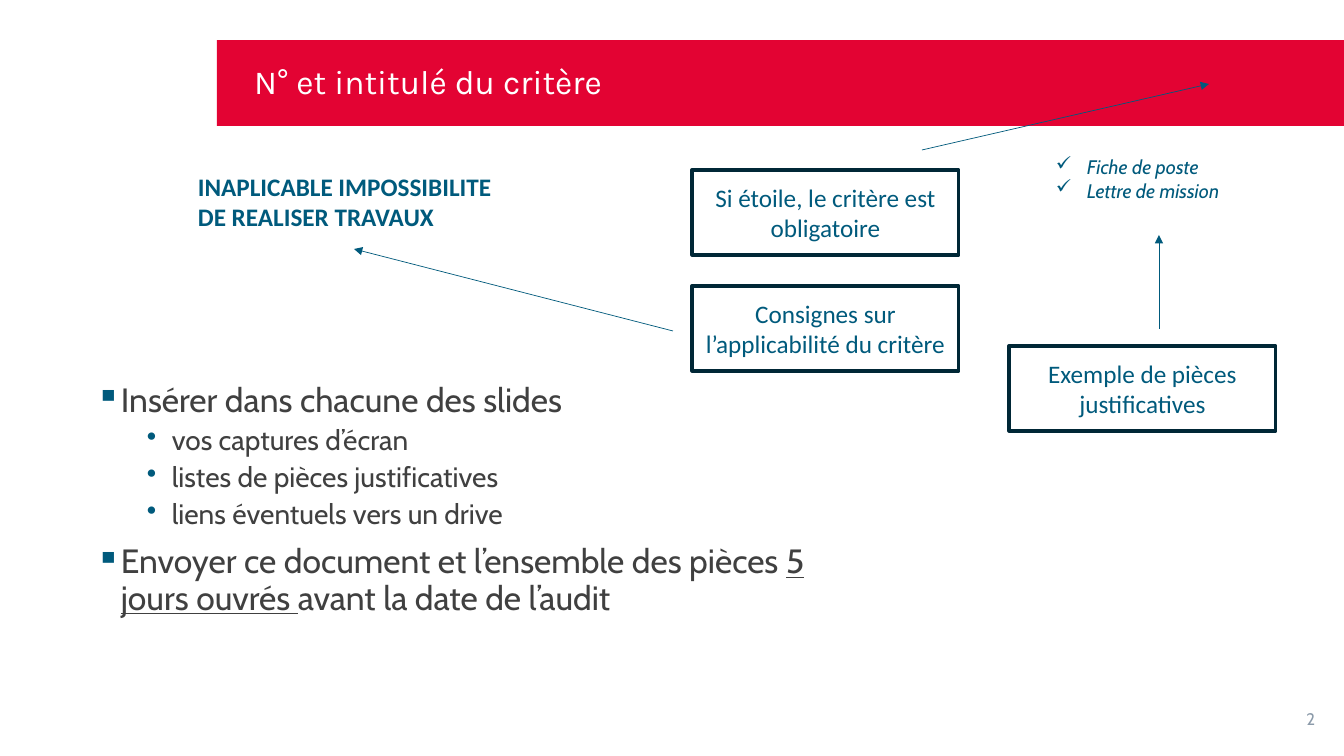
from lxml.etree import SubElement
from pptx import Presentation
from pptx.dml.color import RGBColor
from pptx.enum.shapes import MSO_CONNECTOR, MSO_SHAPE
from pptx.enum.text import MSO_ANCHOR, PP_ALIGN
from pptx.oxml.ns import qn
from pptx.util import Pt

PX = 914400 / 100.8
COLORS = {"red": "E30333", "white": "FFFFFF", "blue": "005A7C",
          "navy": "002736", "text": "404040", "grey": "8C9BAA"}
LABEL = {"size": Pt(18), "name": "Calibri", "color": "blue"}
BODY = {"name": "Cabin", "color": "text"}


def px(*lengths):
    return [round(length * PX) for length in lengths]


def rgb(name):
    return RGBColor.from_string(COLORS[name])


def format_font(font, values):
    for key, value in values.items():
        if key == "color":
            font.color.rgb = rgb(value)
        else:
            setattr(font, key, value)


def add_bullet(paragraph, character, margin, hanging):
    properties = paragraph._p.get_or_add_pPr()
    margin, hanging = px(margin, hanging)
    properties.set("marL", str(margin))
    properties.set("indent", str(-hanging))
    color = SubElement(properties, qn("a:buClr"))
    SubElement(color, qn("a:srgbClr"), val=COLORS["blue"])
    SubElement(properties, qn("a:buChar"), char=character)


def add_text_box(slide, box):
    frame = slide.shapes.add_textbox(*px(*box)).text_frame
    frame.word_wrap = True
    return frame


def next_paragraph(frame, index):
    return frame.add_paragraph() if index else frame.paragraphs[0]


def add_text(paragraph, text, font):
    run = paragraph.add_run()
    run.text = text
    format_font(run.font, font)


def add_banner(slide, box):
    """Red band with the slide title over it."""
    left, top, width, height = box
    band = slide.shapes.add_shape(MSO_SHAPE.RECTANGLE, *px(*box))
    band.shadow.inherit = False
    band.fill.solid()
    band.fill.fore_color.rgb = rgb("red")
    band.line.fill.background()
    title = slide.shapes.title
    title._element.addprevious(band._element)
    title.left, title.top, title.width, title.height = px(
        left + 27, top + 1, width - 57, height - 1)
    title.text_frame.vertical_anchor = MSO_ANCHOR.MIDDLE
    paragraph = title.text_frame.paragraphs[0]
    paragraph.alignment = PP_ALIGN.LEFT
    paragraph.line_spacing = 0.9
    add_text(paragraph, "N° et intitulé du critère",
             {"size": Pt(24), "name": "Karla", "color": "white"})


def add_instructions(slide, box):
    items = [
        (0, ["Insérer dans chacune des slides"]),
        (1, ["vos captures d’écran"]),
        (1, ["listes de pièces justificatives"]),
        (1, ["liens éventuels vers un drive"]),
        (0, ["Envoyer ce document et l’ensemble des pièces ",
             "5 jours ouvrés ", "avant la date de l’audit"]),
    ]
    styles = [("▪", 25, 24, 10), ("•", 76, 20, 5)]
    frame = add_text_box(slide, box)
    for index, (level, texts) in enumerate(items):
        character, margin, size, space = styles[level]
        paragraph = next_paragraph(frame, index)
        paragraph.level = level
        paragraph.line_spacing = 0.9
        if index:
            paragraph.space_before = Pt(space)
        add_bullet(paragraph, character, margin, 25)
        for position, text in enumerate(texts):
            add_text(paragraph, text,
                     {**BODY, "size": Pt(size), "underline": position == 1})


def add_evidence(slide, box):
    frame = add_text_box(slide, box)
    for index, text in enumerate(["Fiche de poste", "Lettre de mission"]):
        paragraph = next_paragraph(frame, index)
        add_bullet(paragraph, "✓", 31, 31)
        add_text(paragraph, text, {"size": Pt(14), "name": "Cabin",
                                   "color": "blue", "italic": True})


def add_applicability(slide, box):
    add_text(add_text_box(slide, box).paragraphs[0],
             "INAPLICABLE IMPOSSIBILITE DE REALISER TRAVAUX",
             {**LABEL, "bold": True})


def add_page_number(slide, box):
    frame = add_text_box(slide, box)
    frame.vertical_anchor = MSO_ANCHOR.MIDDLE
    frame.paragraphs[0].alignment = PP_ALIGN.RIGHT
    add_text(frame.paragraphs[0], "2",
             {"size": Pt(12), "name": "Cabin", "color": "grey"})


def add_callout(slide, box, text):
    shape = slide.shapes.add_shape(MSO_SHAPE.RECTANGLE, *px(*box))
    shape.shadow.inherit = False
    shape.fill.background()
    shape.line.color.rgb = rgb("navy")
    shape.line.width = Pt(2.25)
    frame = shape.text_frame
    frame.word_wrap = True
    frame.vertical_anchor = MSO_ANCHOR.MIDDLE
    frame.paragraphs[0].alignment = PP_ALIGN.CENTER
    add_text(frame.paragraphs[0], text, LABEL)


def add_arrow(slide, ends):
    arrow = slide.shapes.add_connector(MSO_CONNECTOR.STRAIGHT, *px(*ends))
    arrow.line.color.rgb = rgb("blue")
    arrow.line.width = Pt(0.5)
    SubElement(arrow.line._get_or_add_ln(), qn("a:tailEnd"), type="triangle")
    SubElement(arrow._element.spPr, qn("a:effectLst"))


def build_criterion_slide(presentation):
    slide = presentation.slides.add_slide(presentation.slide_layouts[5])
    add_banner(slide, (217, 40, 1127, 86))
    add_instructions(slide, (86, 378, 744, 480))
    add_page_number(slide, (1023, 699, 302, 40))
    add_evidence(slide, (1046, 150, 327, 57))
    add_applicability(slide, (188, 166, 330, 72))
    callouts = [(692, 170, "Si étoile, le critère est obligatoire"),
                (692, 286, "Consignes sur l’applicabilité du critère"),
                (1009, 346, "Exemple de pièces justificatives")]
    for left, top, text in callouts:
        add_callout(slide, (left, top, 267, 85), text)
    for ends in [(922, 150, 1209, 84), (673, 331, 354, 249),
                 (1159, 329, 1159, 235)]:
        add_arrow(slide, ends)


def main():
    presentation = Presentation()
    presentation.slide_width, presentation.slide_height = px(1344, 756)
    build_criterion_slide(presentation)
    presentation.save("out.pptx")


if __name__ == "__main__":
    main()
